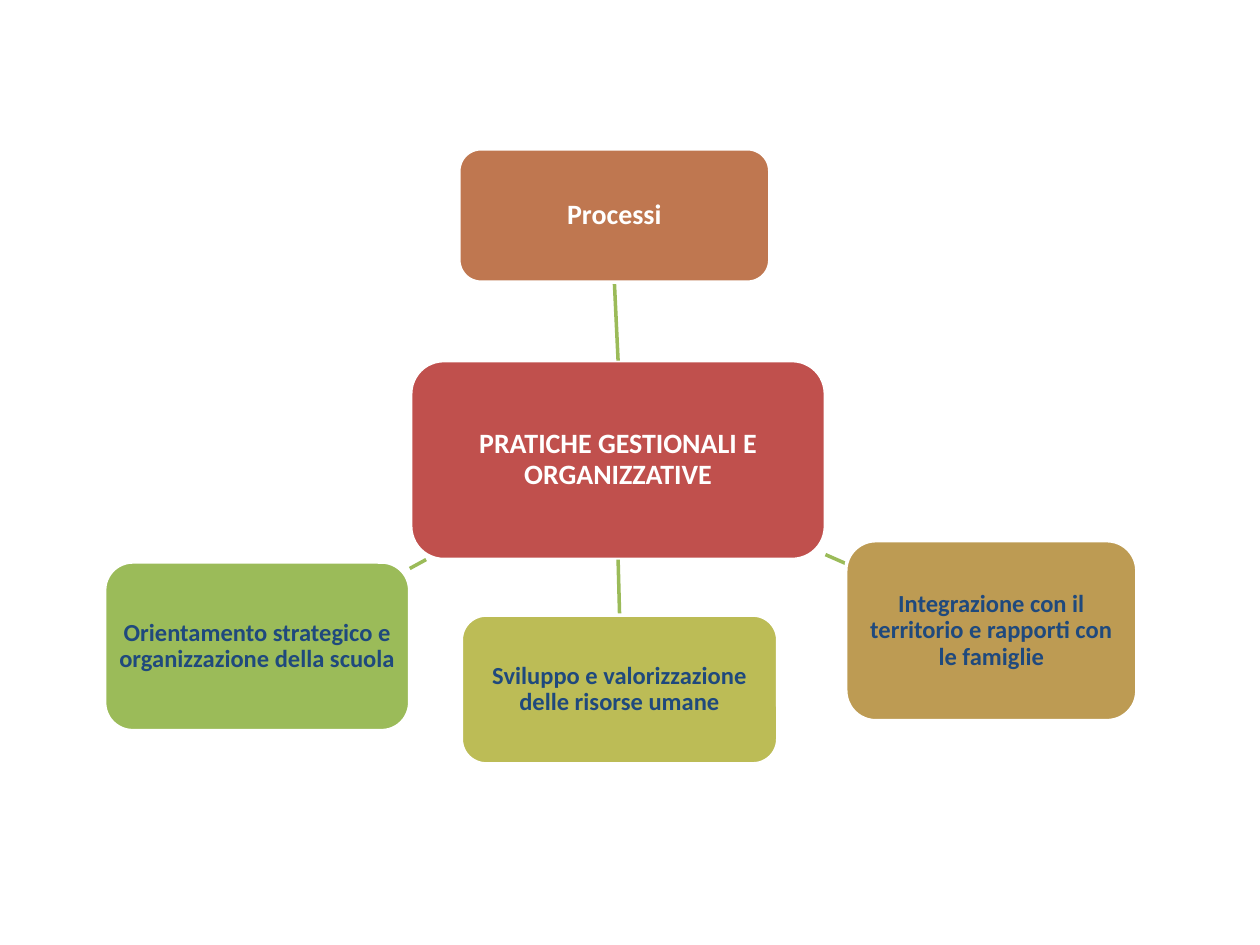
from dataclasses import dataclass

import pptx
import pptx.dml.color
import pptx.enum.shapes
import pptx.enum.text
import pptx.oxml
import pptx.oxml.ns
import pptx.util

Cm = pptx.util.Cm
Pt = pptx.util.Pt
TOP, BOTTOM = 0, 2


@dataclass(frozen=True)
class Theme:
    font: str = "Calibri"
    light: str = "FFFFFF"
    dark: str = "1F497D"
    link: str = "9BBB59"
    hub: str = "C0504D"
    process: str = "BF7750"
    territory: str = "BD9B53"
    resources: str = "BCBC56"
    strategy: str = "9BBB59"
    heading: int = 16
    body: int = 14
    line: int = 2


THEME = Theme()


def rgb(value):
    return pptx.dml.color.RGBColor.from_string(value)


def set_attributes(target, values):
    for name, value in values.items():
        setattr(target, name, value)


def add_node(slide, box, rect, text, fill, color, size):
    left, top, width, height = rect
    shape = slide.shapes.add_shape(
        pptx.enum.shapes.MSO_SHAPE.ROUNDED_RECTANGLE,
        Cm(box[0] + left), Cm(box[1] + top), Cm(width), Cm(height))
    shape.shadow.inherit = False
    shape.fill.solid()
    shape.fill.fore_color.rgb = rgb(fill)
    shape.line.color.rgb = rgb(THEME.light)
    shape.line.width = Pt(THEME.line)
    frame = shape.text_frame
    set_attributes(frame, {
        "word_wrap": True,
        "vertical_anchor": pptx.enum.text.MSO_ANCHOR.MIDDLE,
        **{f"margin_{side}": Cm(0.1) for side in ("left", "top", "right", "bottom")},
    })
    paragraph = frame.paragraphs[0]
    set_attributes(paragraph, {
        "alignment": pptx.enum.text.PP_ALIGN.CENTER, "line_spacing": 0.9})
    run = paragraph.add_run()
    run.text = text
    set_attributes(run.font, {"name": THEME.font, "size": Pt(size), "bold": True})
    run.font.color.rgb = rgb(color)
    return shape


def add_link(slide, box, start, end):
    points = [Cm(box[i % 2] + value) for i, value in enumerate((*start, *end))]
    connector = slide.shapes.add_connector(
        pptx.enum.shapes.MSO_CONNECTOR.STRAIGHT, *points)
    connector.line.color.rgb = rgb(THEME.link)
    connector.line.width = Pt(THEME.line)
    properties = connector._element.spPr
    properties.append(pptx.oxml.parse_xml(
        f"<a:effectLst {pptx.oxml.ns.nsdecls('a')}/>"))
    return connector


def add_process_map(slide, box):
    hub = add_node(slide, box, (6.17, 4.27, 8.36, 4.01),
                   "PRATICHE GESTIONALI E ORGANIZZATIVE",
                   THEME.hub, THEME.light, THEME.heading)
    branches = [
        ((7.14, 0, 6.27, 2.69), "Processi", THEME.process, THEME.light,
         THEME.heading, (10.35, 4.27), (10.28, 2.69), (TOP, BOTTOM)),
        ((14.94, 7.9, 5.87, 3.63),
         "Integrazione con il territorio e rapporti con le famiglie",
         THEME.territory, THEME.dark, THEME.body,
         (14.53, 8.18), (14.94, 8.36), None),
        ((7.19, 9.4, 6.38, 3), "Sviluppo e valorizzazione delle risorse umane",
         THEME.resources, THEME.dark, THEME.body,
         (10.35, 8.28), (10.38, 9.4), (BOTTOM, TOP)),
        ((0, 8.33, 6.15, 3.4),
         "Orientamento strategico e organizzazione della scuola",
         THEME.strategy, THEME.dark, THEME.body,
         (6.48, 8.28), (6.15, 8.46), None),
    ]
    for rect, text, fill, color, size, start, end, sides in branches:
        connector = add_link(slide, box, start, end)
        node = add_node(slide, box, rect, text, fill, color, size)
        if sides:
            connector.begin_connect(hub, sides[0])
            connector.end_connect(node, sides[1])


def main():
    presentation = pptx.Presentation()
    set_attributes(presentation, {"slide_width": Cm(25.4), "slide_height": Cm(19.05)})
    slide = presentation.slides.add_slide(presentation.slide_layouts[6])
    add_process_map(slide, (2.11, 3))
    presentation.save("out.pptx")


if __name__ == "__main__":
    main()
